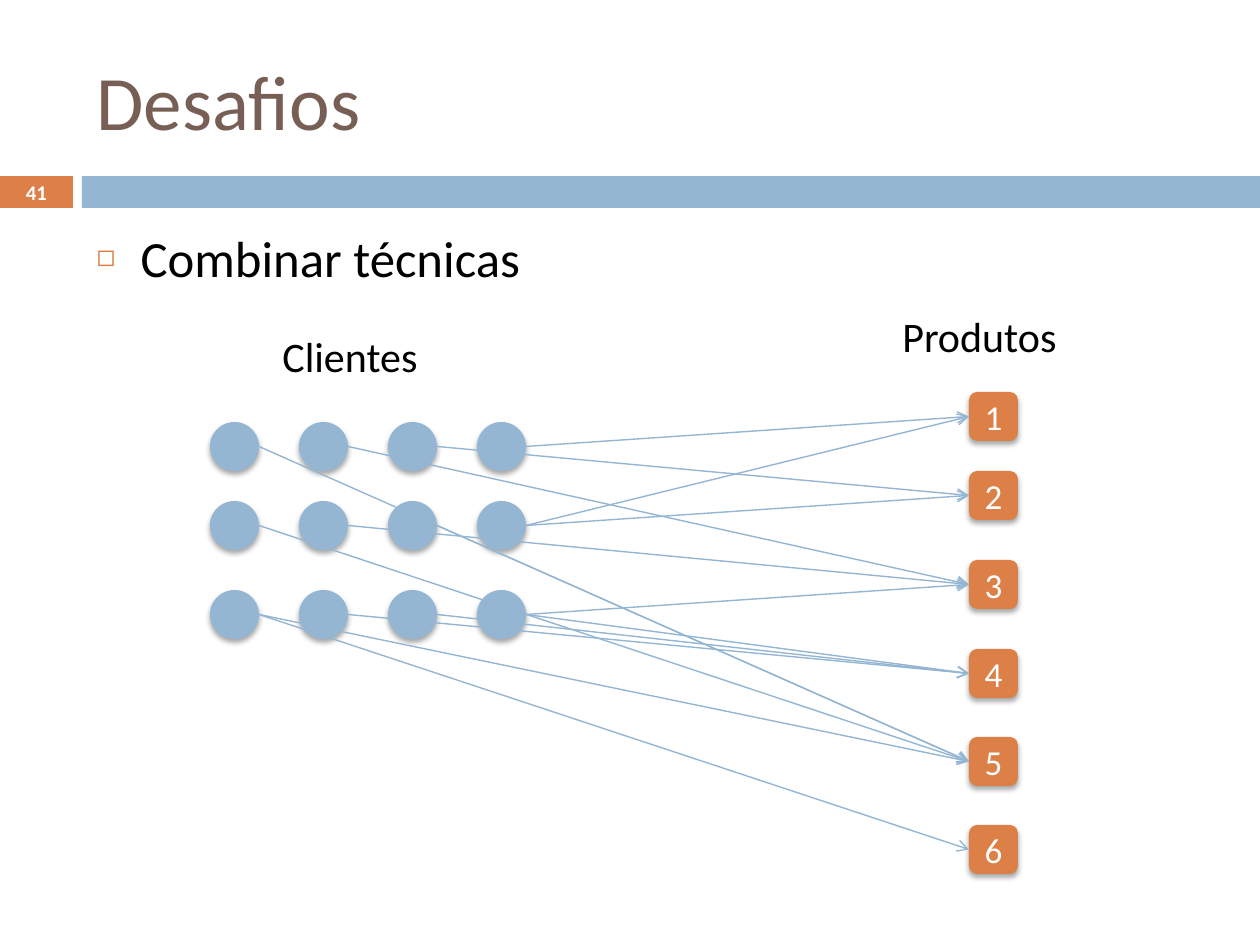
import dataclasses

import lxml.etree
import pptx
import pptx.dml.color
import pptx.enum.shapes
import pptx.enum.text
import pptx.oxml.ns
import pptx.util

SCALE = 914400 / 126
SHAPE = pptx.enum.shapes.MSO_SHAPE
ALIGN = pptx.enum.text.PP_ALIGN
ANCHOR = pptx.enum.text.MSO_ANCHOR


@dataclasses.dataclass(frozen=True)
class Theme:
    font: str = "Calibri"
    blue: str = "94B6D2"
    orange: str = "DD8047"
    brown: str = "775F55"
    black: str = "000000"
    white: str = "FFFFFF"
    title_size: float = 44
    body_size: float = 29
    label_size: float = 24
    product_size: float = 20
    number_size: float = 11.9
    line_width: float = 0.79


THEME = Theme()
NODE = 49
CUSTOMER_COLUMNS = [0, 89, 178, 267]
CUSTOMER_ROWS = [30, 109, 198]
PRODUCT_LEFT = 759
PRODUCT_TOPS = [0, 79, 168, 257, 345, 433]
LINKS = [
    (3, 0, 1), (2, 0, 2), (3, 1, 1), (3, 1, 2), (1, 0, 3),
    (1, 1, 3), (3, 2, 3), (2, 2, 4), (1, 2, 4), (3, 2, 4),
    (0, 0, 5), (0, 1, 5), (0, 2, 5), (0, 2, 6), (2, 1, 5),
]


def px(value):
    return pptx.util.Emu(round(value * SCALE))


def rgb(color):
    return pptx.dml.color.RGBColor.from_string(color)


def add_xml(parent, tag, **attributes):
    return lxml.etree.SubElement(parent, pptx.oxml.ns.qn(tag), attributes)


def write_text(shape, text, *, size, color, bold=False, align=ALIGN.LEFT,
               anchor=ANCHOR.TOP, margin=None):
    frame = shape.text_frame
    frame.word_wrap = True
    frame.auto_size = pptx.enum.text.MSO_AUTO_SIZE.NONE
    frame.vertical_anchor = anchor
    if margin is not None:
        frame.margin_left = frame.margin_right = px(margin)
        frame.margin_top = frame.margin_bottom = px(margin)
    paragraph = frame.paragraphs[0]
    paragraph.alignment = align
    run = paragraph.add_run()
    run.text = text
    run.font.name = THEME.font
    run.font.size = pptx.util.Pt(size)
    run.font.bold = bold
    run.font.color.rgb = rgb(color)
    return paragraph


def place(shape, box):
    shape.left, shape.top, shape.width, shape.height = map(px, box)


def add_box(shapes, kind, box, color, shadow=False):
    shape = shapes.add_shape(kind, *map(px, box))
    shape.fill.solid()
    shape.fill.fore_color.rgb = rgb(color)
    shape.line.fill.background()
    shape.shadow.inherit = False
    if shadow:
        effects = shape._element.spPr.find(pptx.oxml.ns.qn("a:effectLst"))
        outer = add_xml(effects, "a:outerShdw", blurRad="38100", dist="25400",
                        dir="5400000", rotWithShape="0")
        tint = add_xml(outer, "a:srgbClr", val=THEME.black)
        add_xml(tint, "a:alpha", val="35000")
    return shape


def add_arrow(shapes, start, end):
    connector = shapes.add_connector(
        pptx.enum.shapes.MSO_CONNECTOR.STRAIGHT, *map(px, (*start, *end)))
    connector.line.color.rgb = rgb(THEME.blue)
    connector.line.width = pptx.util.Pt(THEME.line_width)
    add_xml(connector.line._get_or_add_ln(), "a:tailEnd", type="arrow")
    add_xml(connector._element.spPr, "a:effectLst")


def add_label(slide, text, box):
    label = slide.shapes.add_textbox(*map(px, box))
    write_text(label, text, size=THEME.label_size, color=THEME.black)


def add_header(slide, box, title, number):
    left, top, width, height = box
    bar_top = top + height - 32
    badge = add_box(slide.shapes, SHAPE.RECTANGLE, (left, bar_top, 73, 32), THEME.orange)
    write_text(badge, number, size=THEME.number_size, color=THEME.white, bold=True,
               align=ALIGN.CENTER, anchor=ANCHOR.MIDDLE, margin=0)
    add_box(slide.shapes, SHAPE.RECTANGLE,
            (left + 82, bar_top, width - 82, 32), THEME.blue)
    place(slide.shapes.title, (left + 84, top + 32, 1124, 136))
    write_text(slide.shapes.title, title, size=THEME.title_size, color=THEME.brown,
               anchor=ANCHOR.MIDDLE)


def add_body(slide, box, text):
    body = slide.placeholders[1]
    place(body, box)
    paragraph = write_text(body, text, size=THEME.body_size, color=THEME.black)
    paragraph.space_before = pptx.util.Pt(7)
    properties = paragraph._p.get_or_add_pPr()
    properties.set("marL", str(px(44)))
    properties.set("indent", str(px(-44)))
    bullet_color = add_xml(properties, "a:buClr")
    add_xml(bullet_color, "a:srgbClr", val=THEME.orange)
    add_xml(properties, "a:buSzPct", val="60000")
    add_xml(properties, "a:buChar", char="◻")


def add_diagram(slide, box):
    left, top = box
    customers = slide.shapes.add_group_shape().shapes
    for row in CUSTOMER_ROWS:
        for column in CUSTOMER_COLUMNS:
            add_box(customers, SHAPE.OVAL, (left + column, top + row, NODE, NODE),
                    THEME.blue, shadow=True)
    products = slide.shapes.add_group_shape().shapes
    for number, product_top in enumerate(PRODUCT_TOPS, 1):
        product = add_box(products, SHAPE.ROUNDED_RECTANGLE,
                          (left + PRODUCT_LEFT, top + product_top, NODE, NODE),
                          THEME.orange, shadow=True)
        write_text(product, str(number), size=THEME.product_size, color=THEME.white,
                   align=ALIGN.CENTER, anchor=ANCHOR.MIDDLE, margin=0)
    add_label(slide, "Clientes", (left + 60, top - 68, 217, 64))
    add_label(slide, "Produtos", (left + 680, top - 88, 227, 64))
    arrows = slide.shapes.add_group_shape().shapes
    for column, row, product in LINKS:
        start = (left + CUSTOMER_COLUMNS[column] + NODE,
                 top + CUSTOMER_ROWS[row] + NODE / 2)
        end = (left + PRODUCT_LEFT, top + PRODUCT_TOPS[product - 1] + NODE / 2)
        add_arrow(arrows, start, end)


def main():
    presentation = pptx.Presentation()
    presentation.slide_width = px(1260)
    presentation.slide_height = px(945)
    slide = presentation.slides.add_slide(presentation.slide_layouts[1])
    add_header(slide, (0, 0, 1260, 208), "Desafios", "41")
    add_body(slide, (84, 220, 1124, 620), "Combinar técnicas")
    add_diagram(slide, (210, 392))
    presentation.save("out.pptx")


if __name__ == "__main__":
    main()
